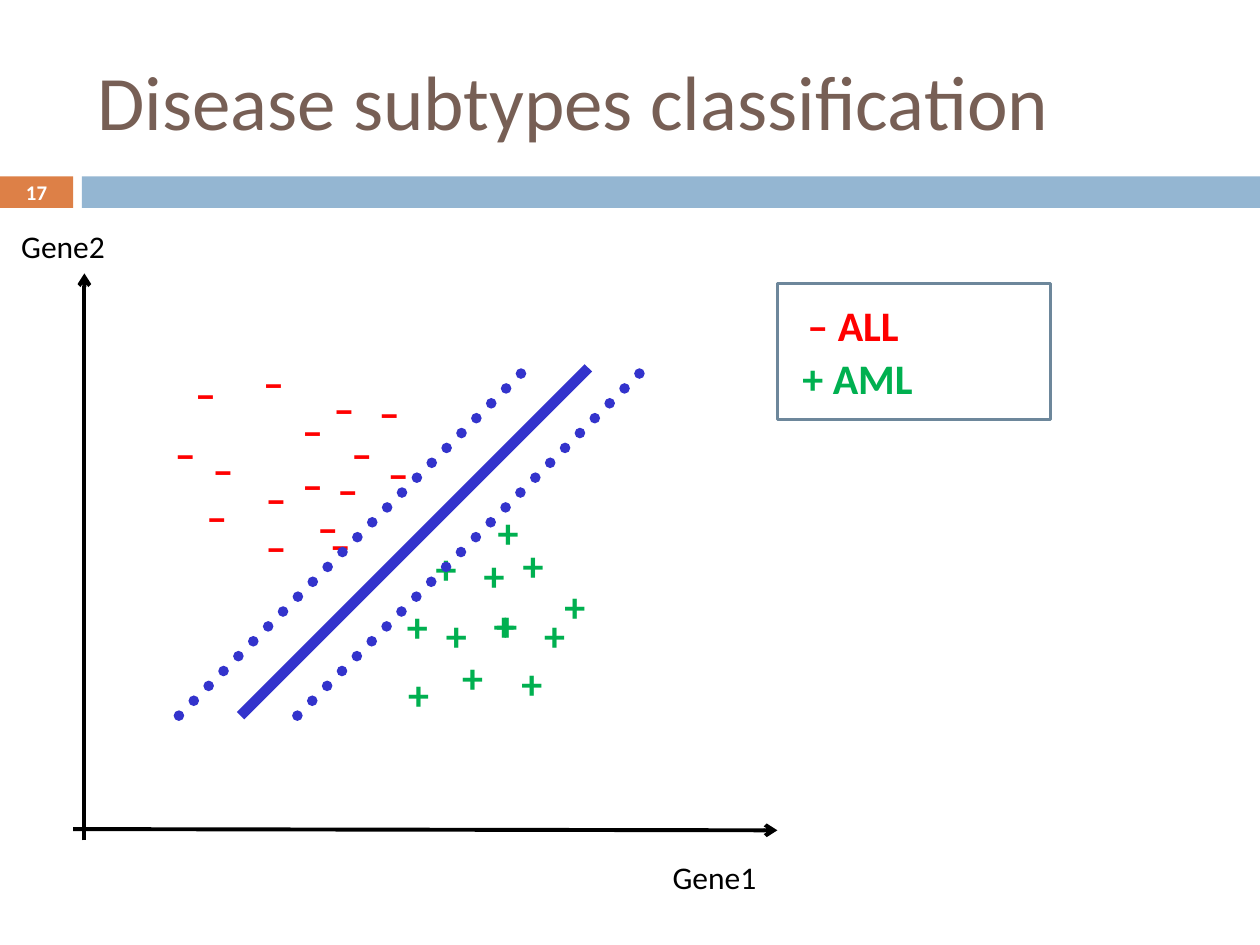
from pptx import Presentation
from pptx.dml.color import RGBColor
from pptx.enum.dml import MSO_LINE
from pptx.enum.shapes import MSO_CONNECTOR, MSO_SHAPE
from pptx.enum.text import MSO_ANCHOR, MSO_AUTO_SIZE, PP_ALIGN
from pptx.oxml.ns import qn
from pptx.util import Inches, Pt
from lxml.etree import SubElement

FONT = "Calibri"
BROWN = RGBColor(0x77, 0x5F, 0x55)
ORANGE = RGBColor(0xDD, 0x80, 0x47)
SKY = RGBColor(0x94, 0xB6, 0xD2)
SLATE = RGBColor(0x6D, 0x87, 0x9B)
RED = RGBColor(0xFF, 0x00, 0x00)
GREEN = RGBColor(0x00, 0xB0, 0x50)
BLUE = RGBColor(0x33, 0x33, 0xCC)
BLACK = RGBColor(0x00, 0x00, 0x00)
WHITE = RGBColor(0xFF, 0xFF, 0xFF)

# Left and top of each sample's mark, in inches within the plot
ALL_MARKS = [
    (2.52, 2.32), (2.42, 2.18), (1.29, 1.59), (1.59, 1.72),
    (1.45, 1.12), (1.99, 1.03), (2.3, 1.41), (2.55, 1.24),
    (2.91, 1.27), (2.69, 1.59), (2.58, 1.88), (2.3, 1.84),
    (2.01, 1.95), (1.54, 2.09), (2.01, 2.33), (2.98, 1.75),
]
AML_MARKS = [
    (3.14, 3.51), (3.13, 2.97), (3.36, 2.51), (3.44, 3.04),
    (3.57, 3.37), (3.85, 2.22), (3.74, 2.56), (3.84, 2.96),
    (4.05, 2.48), (3.82, 2.96), (4.04, 3.42), (4.38, 2.81),
    (4.22, 3.04),
]


def style(para, size, color, bold=False):
    font = para.font
    font.name, font.size, font.bold = FONT, Pt(size), bold
    font.color.rgb = color


def add_label(slide, text, x, y, w, h, size, color, bold=False):
    box = slide.shapes.add_textbox(Inches(x), Inches(y), Inches(w), Inches(h))
    frame = box.text_frame
    frame.word_wrap = False
    frame.auto_size = MSO_AUTO_SIZE.SHAPE_TO_FIT_TEXT
    frame.text = text
    style(frame.paragraphs[0], size, color, bold)


def add_rect(slide, x, y, w, h, fill=None):
    rect = slide.shapes.add_shape(
        MSO_SHAPE.RECTANGLE, Inches(x), Inches(y), Inches(w), Inches(h))
    rect.shadow.inherit = False
    if fill is None:
        rect.fill.background()
    else:
        rect.fill.solid()
        rect.fill.fore_color.rgb = fill
        rect.line.fill.background()
    return rect


def add_line(slide, x1, y1, x2, y2, color, width):
    link = slide.shapes.add_connector(
        MSO_CONNECTOR.STRAIGHT, Inches(x1), Inches(y1), Inches(x2), Inches(y2))
    link.line.color.rgb = color
    link.line.width = Pt(width)
    SubElement(link._element.spPr, qn("a:effectLst"))
    return link


def add_axis(slide, x1, y1, x2, y2):
    axis = add_line(slide, x1, y1, x2, y2, BLACK, 2.25)
    SubElement(axis.line._get_or_add_ln(), qn("a:tailEnd"), type="arrow")


def add_header(slide, text, number, x, y, w):
    title = slide.shapes.title
    title.left, title.top = Inches(x + 0.67), Inches(y + 0.25)
    title.width, title.height = Inches(8.92), Inches(1.08)
    title.text_frame.text = text
    title.text_frame.vertical_anchor = MSO_ANCHOR.MIDDLE
    head = title.text_frame.paragraphs[0]
    head.alignment = PP_ALIGN.LEFT
    style(head, 44, BROWN)

    badge = add_rect(slide, x, y + 1.4, 0.58, 0.25, ORANGE)
    add_rect(slide, x + 0.65, y + 1.4, w - 0.65, 0.25, SKY)
    frame = badge.text_frame
    frame.margin_top = frame.margin_bottom = 0
    frame.vertical_anchor = MSO_ANCHOR.MIDDLE
    frame.text = number
    frame.paragraphs[0].alignment = PP_ALIGN.CENTER
    style(frame.paragraphs[0], 11.9, WHITE, True)


def add_plot(slide, x, y):
    """Scatter of both subtypes with the separating line and its margins."""
    groups = (("–", ALL_MARKS, 0.46, RED), ("+", AML_MARKS, 0.52, GREEN))
    for sign, marks, width, color in groups:
        for dx, dy in marks:
            add_label(slide, sign, x + dx, y + dy, width, 0.5, 24, color, True)

    add_axis(slide, x + 0.67, y + 4.92, x + 0.67, y + 0.42)
    add_axis(slide, x + 0.58, y + 4.83, x + 6.17, y + 4.84)
    for name, dx, dy in (("Gene2", 0.07, 0), ("Gene1", 5.24, 5.01)):
        add_label(slide, name, x + dx, y + dy, 0.9, 0.4, 18, BLACK)

    for dx, dotted in ((2.36, True), (1.42, True), (1.91, False)):
        edge = add_line(slide, x + dx, y + 3.93, x + dx + 2.76, y + 1.17,
                        BLUE, 6)
        if dotted:
            edge.line.dash_style = MSO_LINE.ROUND_DOT
            edge.line._get_or_add_ln().set("cap", "rnd")


def add_legend(slide, x, y):
    frame = add_rect(slide, x, y, 2.17, 1.08)
    frame.line.color.rgb = SLATE
    frame.line.width = Pt(1.5)
    add_label(slide, "– ALL", x + 0.14, y + 0.08, 1.07, 0.5, 24, RED, True)
    add_label(slide, "+ AML", x + 0.1, y + 0.5, 1.16, 0.5, 24, GREEN, True)


def main():
    deck = Presentation()
    deck.slide_width, deck.slide_height = Inches(10), Inches(7.5)
    slide = deck.slides.add_slide(deck.slide_layouts[5])
    add_header(slide, "Disease subtypes classification", "17", 0, 0, 10)
    add_plot(slide, 0, 1.75)
    add_legend(slide, 6.17, 2.25)
    deck.save("out.pptx")


if __name__ == "__main__":
    main()
